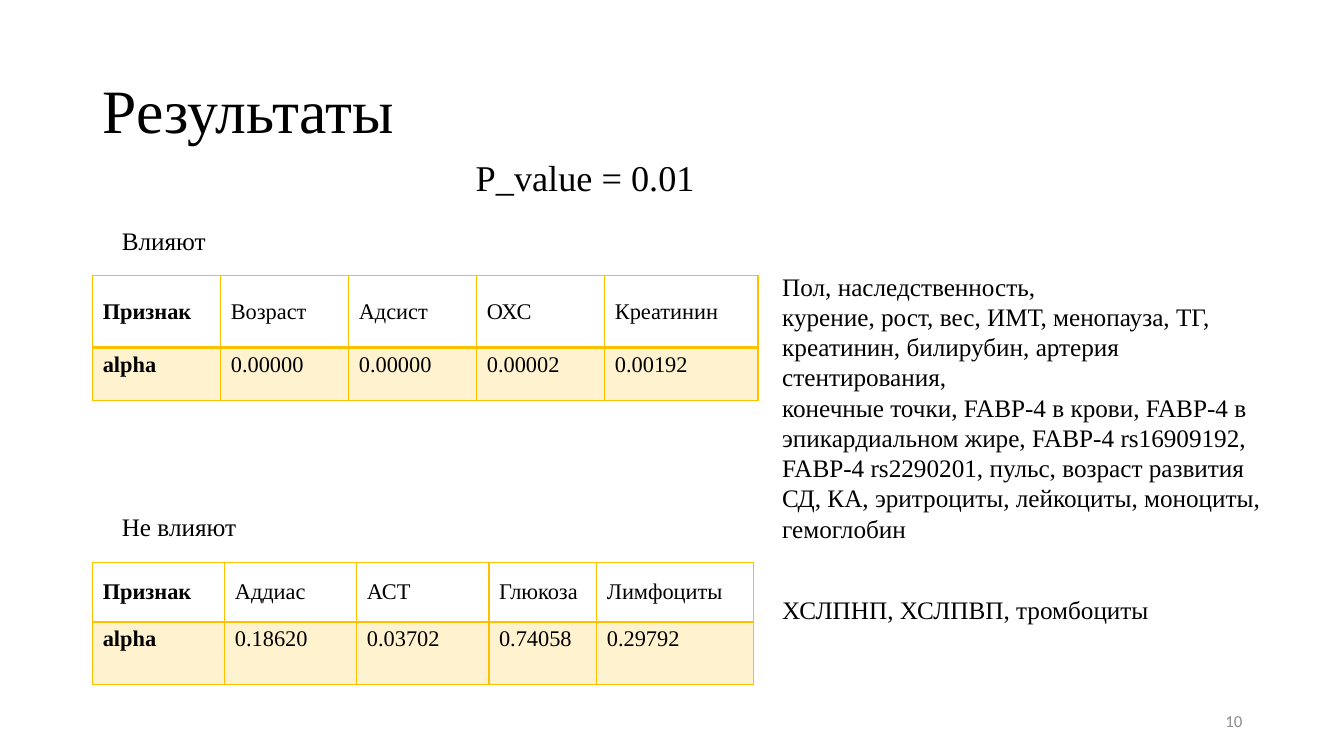
import pptx
import pptx.util
import pptx.dml.color
import pptx.enum.text
import pptx.oxml.ns
from lxml import etree

Inches, Pt = pptx.util.Inches, pptx.util.Pt
RGBColor = pptx.dml.color.RGBColor
ANCHOR = pptx.enum.text.MSO_ANCHOR
ALIGN = pptx.enum.text.PP_ALIGN
qn = pptx.oxml.ns.qn

BLACK = RGBColor(0, 0, 0)
WHITE = RGBColor(255, 255, 255)
GRAY = RGBColor(0x8C, 0x8C, 0x8C)
GOLD = RGBColor(0xFF, 0xC0, 0x00)
CREAM = RGBColor(0xFF, 0xF2, 0xCF)
SERIF = "Times New Roman"

# Content: boxes are left, top, width, height in inches
TITLE = "Результаты"
TITLE_BOX = (0.92, 0.4, 11.5, 1.45)

TEXTS = [
    {"box": (4.62, 1.54, 2.53, 0.63), "lines": ["P_value = 0.01"],
     "size": 25.9, "spacing": 0.9, "before": 10},
    {"box": (1.11, 2.19, 1.04, 0.4), "lines": ["Влияют"], "wrap": False},
    {"box": (1.11, 5.02, 1.35, 0.4), "lines": ["Не влияют"], "wrap": False},
    {"box": (7.66, 2.64, 5.04, 2.83), "lines": [
        "Пол, наследственность,",
        "курение, рост, вес, ИМТ, менопауза, ТГ, креатинин, билирубин, "
        "артерия стентирования,",
        "конечные точки, FABP-4 в крови, FABP-4 в эпикардиальном жире, "
        "FABP-4 rs16909192, FABP-4 rs2290201, пульс, возраст развития СД, "
        "КА, эритроциты, лейкоциты, моноциты, гемоглобин"]},
    {"box": (7.66, 5.85, 5.48, 0.4), "lines": ["ХСЛПНП, ХСЛПВП, тромбоциты"]},
]

TABLES = [
    {"pos": (0.92, 2.73), "cols": [1.27, 1.27, 1.27, 1.27, 1.52],
     "rows": [0.72, 0.52], "divider": 2.25,
     "data": [("Признак", "Возраст", "Адсист", "ОХС", "Креатинин"),
              ("alpha", "0.00000", "0.00000", "0.00002", "0.00192")]},
    {"pos": (0.92, 5.58), "cols": [1.31, 1.31, 1.31, 1.07, 1.55],
     "rows": [0.59, 0.62], "divider": 1.5,
     "data": [("Признак", "Аддиас", "АСТ", "Глюкоза", "Лимфоциты"),
              ("alpha", "0.18620", "0.03702", "0.74058", "0.29792")]},
]

PAGE_BOX = (9.42, 6.95, 3, 0.4)
PAGE = "10"


def format_font(font, size, color=BLACK, name=SERIF, bold=False):
    values = {"size": Pt(size), "name": name, "bold": bold}
    for key, value in values.items():
        setattr(font, key, value)
    font.color.rgb = color


def add_text(slide, box, lines, size=18, spacing=1.0, before=0, wrap=True):
    tf = slide.shapes.add_textbox(*map(Inches, box)).text_frame
    tf.word_wrap = wrap
    for i, line in enumerate(lines):
        p = tf.add_paragraph() if i else tf.paragraphs[0]
        p.line_spacing, p.space_before = spacing, Pt(before)
        r = p.add_run()
        r.text = line
        format_font(r.font, size)


def set_borders(cell, widths):
    tcPr = cell._tc.get_or_add_tcPr()
    for side, width in widths.items():
        ln = etree.SubElement(tcPr, qn("a:ln" + side), w=str(Pt(width)))
        fill = etree.SubElement(ln, qn("a:solidFill"))
        etree.SubElement(fill, qn("a:srgbClr"), val=str(GOLD))


def add_table(slide, pos, cols, rows, divider, data):
    size = sum(cols), sum(rows)
    table = slide.shapes.add_table(len(rows), len(cols),
                                   *map(Inches, pos + size)).table
    for col, width in zip(table.columns, cols):
        col.width = Inches(width)
    for row, height in zip(table.rows, rows):
        row.height = Inches(height)
    for i, values in enumerate(data):
        header = i == 0
        for j, value in enumerate(values):
            cell = table.cell(i, j)
            cell.text = value
            cell.vertical_anchor = ANCHOR.MIDDLE if header else ANCHOR.TOP
            format_font(cell.text_frame.paragraphs[0].runs[0].font, 16,
                        bold=j == 0)
            set_borders(cell, {"L": 1, "R": 1,
                               "T": 1 if header else divider,
                               "B": divider if header else 1})
            cell.fill.solid()
            cell.fill.fore_color.rgb = WHITE if header else CREAM


def add_page_number(slide):
    tf = slide.shapes.add_textbox(*map(Inches, PAGE_BOX)).text_frame
    tf.word_wrap = True
    tf.vertical_anchor = ANCHOR.MIDDLE
    p = tf.paragraphs[0]
    p.alignment = ALIGN.RIGHT
    r = p.add_run()
    r.text = PAGE
    format_font(r.font, 12, GRAY, "Calibri")


def main():
    prs = pptx.Presentation()
    prs.slide_width, prs.slide_height = Inches(13.33), Inches(7.5)
    slide = prs.slides.add_slide(prs.slide_layouts[5])

    # Title
    sp = slide.shapes.title
    for key, value in zip(("left", "top", "width", "height"), TITLE_BOX):
        setattr(sp, key, Inches(value))
    tf = sp.text_frame
    tf.text = TITLE
    tf.vertical_anchor = ANCHOR.MIDDLE
    p = tf.paragraphs[0]
    p.alignment, p.line_spacing = ALIGN.LEFT, 0.9
    format_font(p.runs[0].font, 44)

    # Tables, labels and feature lists
    for table in TABLES:
        add_table(slide, **table)
    for text in TEXTS:
        add_text(slide, **text)
    add_page_number(slide)

    prs.save("out.pptx")


if __name__ == "__main__":
    main()
